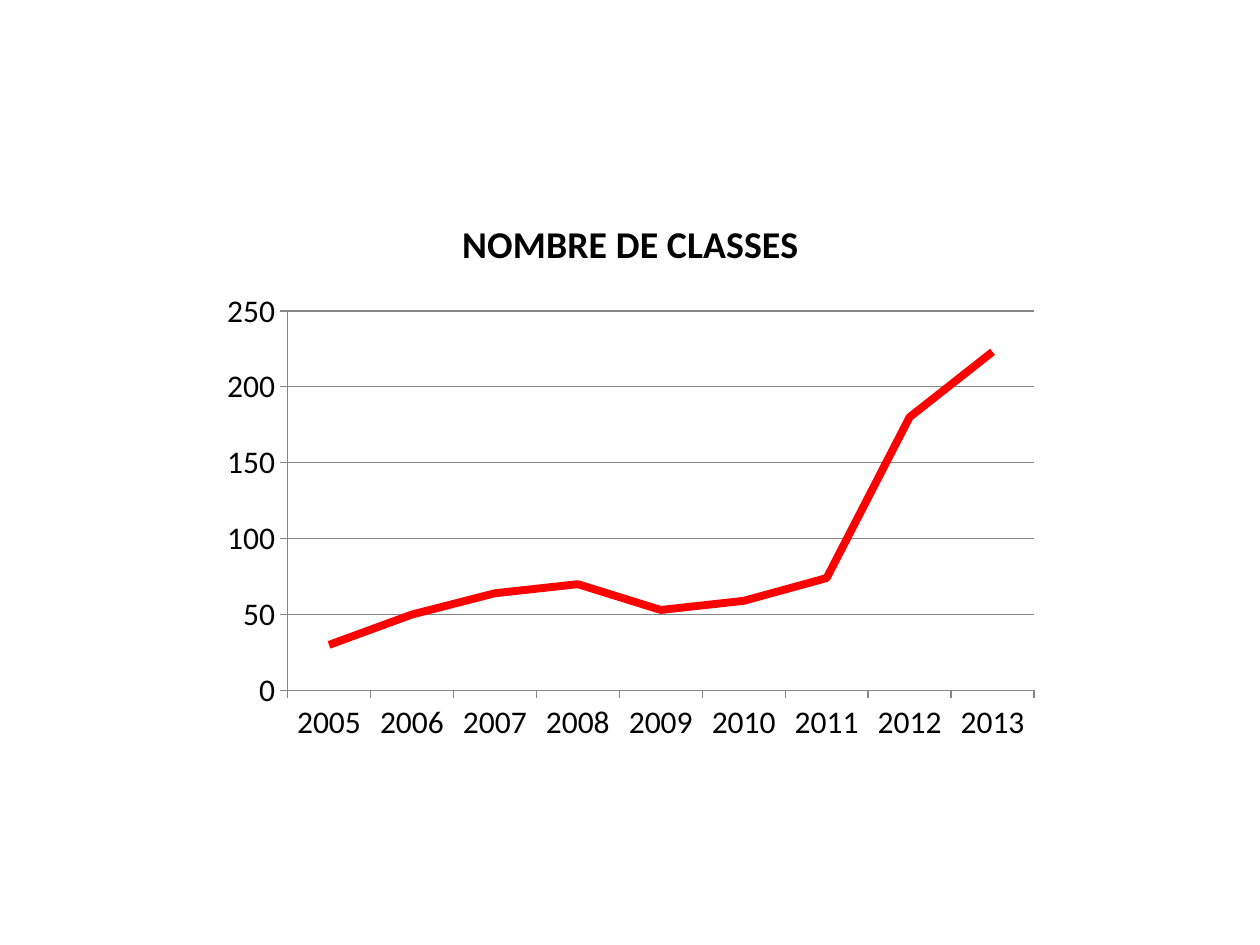
import pptx
import pptx.chart.data
import pptx.dml.color
import pptx.enum.chart
import pptx.util

TITLE = "NOMBRE DE CLASSES"
CLASSES_BY_YEAR = {
    "2005": 30,
    "2006": 50,
    "2007": 64,
    "2008": 70,
    "2009": 53,
    "2010": 59,
    "2011": 74,
    "2012": 180,
    "2013": 223,
}
FONT = "Calibri"
BLACK, RED, GRAY = "000000", "FF0000", "868686"
CHART_BOX = (1.67, 1.53, 6.67, 4.44)


def rgb(color):
    return pptx.dml.color.RGBColor.from_string(color)


def style_font(font, size, bold=False):
    font.name = FONT
    font.size = pptx.util.Pt(size)
    font.bold = bold
    font.color.rgb = rgb(BLACK)


def style_line(line, color, width):
    line.color.rgb = rgb(color)
    line.width = pptx.util.Pt(width)


def add_classes_chart(slide):
    data = pptx.chart.data.CategoryChartData()
    data.categories = list(CLASSES_BY_YEAR)
    data.add_series(TITLE, list(CLASSES_BY_YEAR.values()))
    chart = slide.shapes.add_chart(
        pptx.enum.chart.XL_CHART_TYPE.LINE_STACKED,
        *map(pptx.util.Inches, CHART_BOX),
        data,
    ).chart
    style_font(chart.font, 18)
    chart.has_legend = False
    chart.has_title = True
    chart.chart_title.include_in_layout = False
    chart.chart_title.text_frame.text = TITLE
    style_font(chart.chart_title.text_frame.paragraphs[0].font, 21.6, bold=True)

    for axis in (chart.category_axis, chart.value_axis):
        axis.major_tick_mark = pptx.enum.chart.XL_TICK_MARK.OUTSIDE
        axis.minor_tick_mark = pptx.enum.chart.XL_TICK_MARK.NONE
        style_line(axis.format.line, GRAY, 0.75)
    chart.value_axis.minimum_scale = 0
    chart.value_axis.maximum_scale = 250
    chart.value_axis.major_unit = 50
    chart.value_axis.has_major_gridlines = True
    style_line(chart.value_axis.major_gridlines.format.line, GRAY, 0.75)

    chart.plots[0].vary_by_categories = False
    series = chart.plots[0].series[0]
    series.smooth = False
    series.marker.style = pptx.enum.chart.XL_MARKER_STYLE.NONE
    style_line(series.format.line, RED, 4.5)


def main():
    presentation = pptx.Presentation()
    presentation.slide_width = pptx.util.Inches(10)
    presentation.slide_height = pptx.util.Inches(7.5)
    slide = presentation.slides.add_slide(presentation.slide_layouts[6])
    add_classes_chart(slide)
    presentation.save("out.pptx")


if __name__ == "__main__":
    main()
